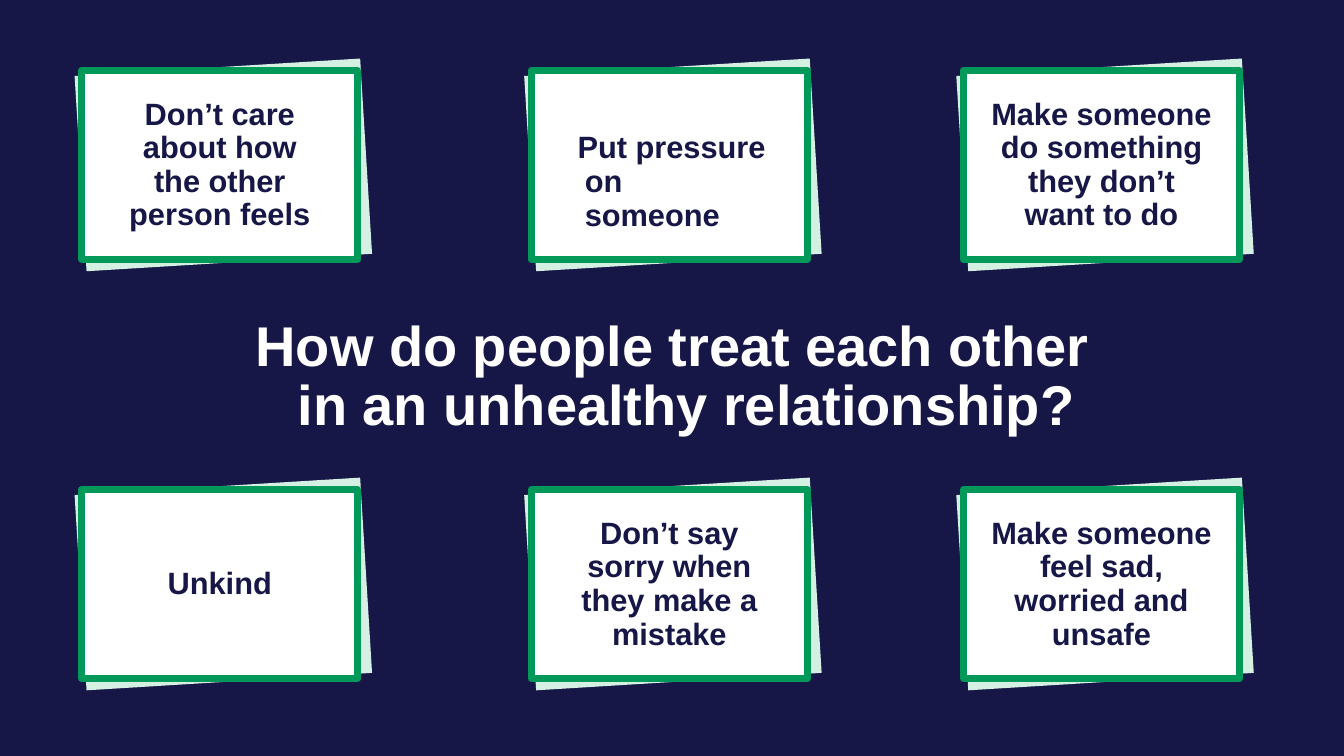
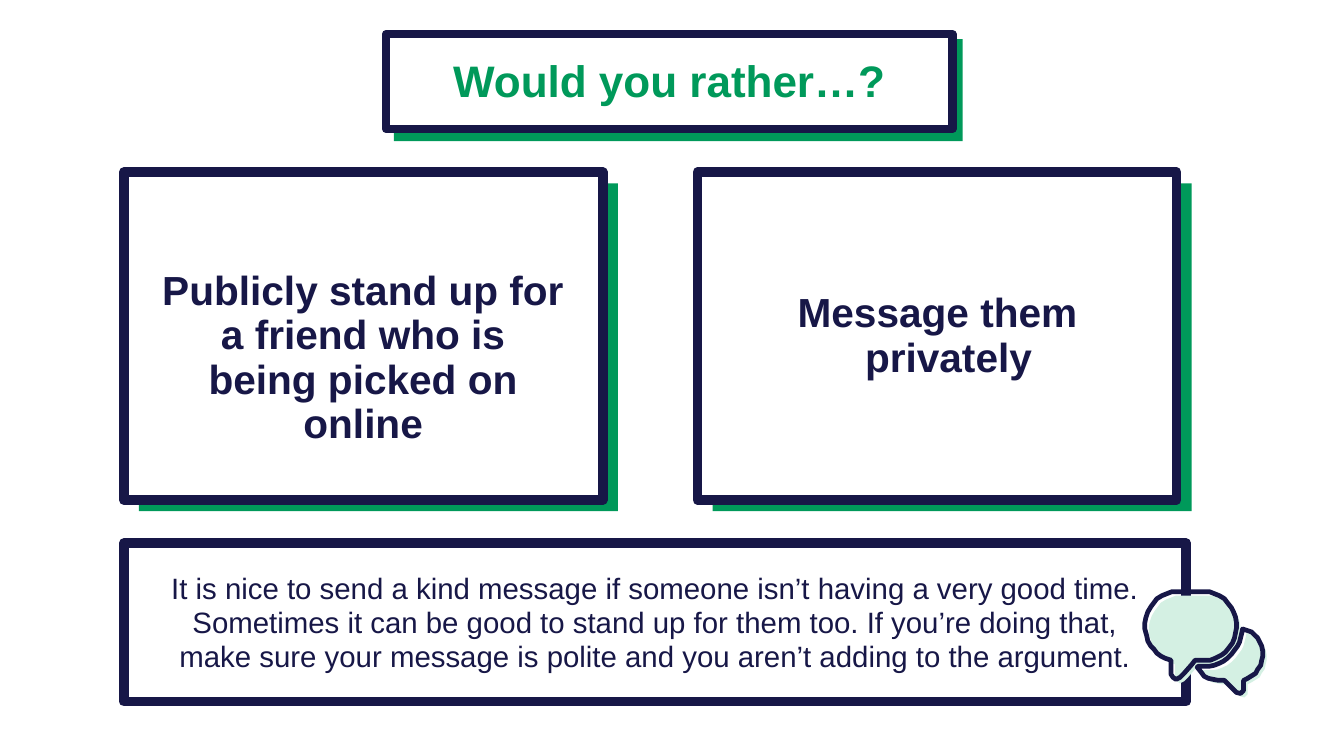
"""Build two slides on healthy and unhealthy ways to treat other people."""
from pptx import Presentation
from pptx.dml.color import RGBColor
from pptx.enum.shapes import MSO_SHAPE
from pptx.enum.text import MSO_ANCHOR, MSO_AUTO_SIZE, PP_ALIGN
from pptx.util import Cm, Pt

COLORS = {"navy": "171747", "green": "00995A", "mint": "D4F0E3", "white": "FFFFFF"}
FONT = "Arial"

QUESTION = "How do people treat each other\nin an unhealthy relationship?"
CARD_COLUMNS = (2.06, 13.39, 24.28)
CARD_ROWS = (1.78, 12.34)
CARD_SIZE = (6.96, 4.75)
PLATE_SIZE = (7.21, 4.93)
PLATE_SHIFT = 0.09
PLATE_ANGLE = -3.5
CARDS = (
    (
        ("Don’t care\nabout how\nthe other\nperson feels", {}),
        ("Put pressure\non\nsomeone", {"hang": (1.35, 0.18), "drop": 0.86}),
        ("Make someone\ndo something\nthey don’t\nwant to do", {}),
    ),
    (
        ("Unkind", {}),
        ("Don’t say\nsorry when\nthey make a\nmistake", {}),
        ("Make someone\nfeel sad,\nworried and\nunsafe", {}),
    ),
)

HEADING = "Would you rather…?"
HEADING_BOX = (9.73, 0.86, 14.27, 2.39)
HEADING_BACKING = (9.93, 0.99, 14.33, 2.57)
CHOICE_TOP = 4.34
CHOICE_SIZE = (12.07, 8.26)
CHOICE_SHIFT = (0.38, 0.28)
CHOICES = (
    (3.12, "Publicly stand up for\na friend who is\nbeing picked on\nonline", {"drop": 1.1}),
    (17.58, "Message them\nprivately", {"hang": (4.22, 1.7)}),
)
ADVICE_BOX = (3.12, 13.69, 26.77, 3.99)
ADVICE = (
    "It is nice to send a kind message if someone isn’t having a very good time.",
    "Sometimes it can be good to stand up for them too. If you’re doing that,\n"
    "make sure your message is polite and you aren’t adding to the argument.",
)

BUBBLE_ORIGIN = (28.85, 14.91)
BUBBLE_UNIT = Cm(0.0254)
BUBBLE_FILL_SHIFT = 0.1
BUBBLES = (
    ((80, 60), (76, 63), (70, 66), (65, 68), (59, 68), (50, 68), (46, 73), (39, 81),
     (35, 85), (31, 87), (28, 85), (26, 82), (26, 68), (20, 66), (16, 64), (12, 61),
     (9, 57), (6, 54), (3, 49), (2, 44), (0, 37), (0, 31), (1, 26), (3, 20), (6, 15),
     (9, 11), (12, 7), (17, 4), (22, 2), (27, 0), (32, 0), (58, 0), (64, 0), (69, 2),
     (74, 4), (79, 7), (82, 11), (86, 16), (88, 20), (90, 25), (91, 31), (91, 36),
     (90, 41), (89, 46), (87, 51), (84, 55)),
    ((108, 42), (106, 40), (103, 39), (100, 38), (97, 37), (96, 42), (95, 46), (94, 50),
     (92, 54), (89, 58), (86, 62), (82, 66), (78, 69), (74, 71), (69, 73), (64, 74),
     (59, 74), (53, 74), (52, 75), (56, 80), (59, 84), (63, 86), (68, 87), (73, 88),
     (79, 88), (83, 92), (91, 100), (95, 101), (98, 98), (98, 88), (102, 86), (110, 81),
     (112, 77), (115, 73), (116, 68), (117, 64), (117, 59), (116, 54), (114, 50), (112, 46)),
)


def rgb(name):
    return RGBColor.from_string(COLORS[name])


def paint(shape, fill=None, line=None, weight=0):
    if fill:
        shape.fill.solid()
        shape.fill.fore_color.rgb = rgb(fill)
    else:
        shape.fill.background()
    if line:
        shape.line.color.rgb = rgb(line)
        shape.line.width = Pt(weight)
    else:
        shape.line.fill.background()


def add_panel(slide, box, **look):
    panel = slide.shapes.add_shape(MSO_SHAPE.RECTANGLE, *map(Cm, box))
    panel.shadow.inherit = False
    paint(panel, **look)
    return panel


def write(shape, paragraphs, size, leading, color="navy", bold=True, hang=None, drop=0):
    frame = shape.text_frame
    frame.word_wrap = True
    frame.auto_size = MSO_AUTO_SIZE.NONE
    frame.vertical_anchor = MSO_ANCHOR.MIDDLE
    frame.margin_left = frame.margin_right = frame.margin_bottom = 0
    frame.margin_top = Cm(drop)
    for index, text in enumerate(paragraphs):
        paragraph = frame.add_paragraph() if index else frame.paragraphs[0]
        paragraph.alignment = PP_ALIGN.LEFT if hang else PP_ALIGN.CENTER
        paragraph.line_spacing = Pt(leading)
        paragraph.space_before = Pt(0)
        if hang:
            margin, outdent = hang
            properties = paragraph._p.get_or_add_pPr()
            properties.set("marL", str(Cm(margin)))
            properties.set("indent", str(-Cm(outdent)))
        for number, line in enumerate(text.split("\n")):
            if number:
                paragraph.add_line_break()
            run = paragraph.add_run()
            run.text = line
            run.font.name = FONT
            run.font.size = Pt(size)
            run.font.bold = bold
            run.font.color.rgb = rgb(color)


def place_title(slide, box, text, **style):
    title = slide.shapes.title
    title.left, title.top, title.width, title.height = map(Cm, box)
    write(title, [text], **style)
    return title


def add_card(slide, left, top, text, style):
    width, height = CARD_SIZE
    plate_width, plate_height = PLATE_SIZE
    plate_left = left + (width - plate_width) / 2 + PLATE_SHIFT
    plate_top = top + (height - plate_height) / 2
    plate = add_panel(slide, (plate_left, plate_top, *PLATE_SIZE), fill="mint")
    plate.rotation = PLATE_ANGLE
    card = add_panel(slide, (left, top, *CARD_SIZE), fill="white", line="green", weight=5)
    write(card, [text], size=22, leading=24, **style)


def add_bubble(slide, points, shift=0, **look):
    left, top = BUBBLE_ORIGIN
    builder = slide.shapes.build_freeform(*points[0], scale=BUBBLE_UNIT)
    builder.add_line_segments(points[1:], close=True)
    bubble = builder.convert_to_shape(Cm(left + shift), Cm(top + shift))
    bubble.shadow.inherit = False
    paint(bubble, **look)


def build_treatment(slide):
    slide.background.fill.solid()
    slide.background.fill.fore_color.rgb = rgb("navy")
    place_title(slide, (6.4, 7.9, 22, 3.25), QUESTION,
                size=40, leading=42, color="white", hang=(1.1, 1.06))
    for top, row in zip(CARD_ROWS, CARDS):
        for left, (text, style) in zip(CARD_COLUMNS, row):
            add_card(slide, left, top, text, style)


def build_choice(slide):
    add_panel(slide, HEADING_BACKING, fill="green")
    heading = place_title(slide, HEADING_BOX, HEADING, size=31.5, leading=36, color="green")
    paint(heading, fill="white", line="navy", weight=6)
    slide.shapes._spTree.append(heading._element)
    shift_x, shift_y = CHOICE_SHIFT
    for left, text, style in CHOICES:
        add_panel(slide, (left + shift_x, CHOICE_TOP + shift_y, *CHOICE_SIZE), fill="green")
        choice = add_panel(slide, (left, CHOICE_TOP, *CHOICE_SIZE),
                           fill="white", line="navy", weight=7)
        write(choice, [text], size=29, leading=31.7, **style)
    advice = add_panel(slide, ADVICE_BOX, line="navy", weight=7)
    write(advice, ADVICE, size=21, leading=24.3, bold=False)
    for points in BUBBLES:
        add_bubble(slide, points, BUBBLE_FILL_SHIFT, fill="mint")
    for points in BUBBLES:
        add_bubble(slide, points, line="navy", weight=3.36)


def main():
    deck = Presentation()
    deck.slide_width, deck.slide_height = Cm(33.87), Cm(19.05)
    title_only = deck.slide_layouts[5]
    for build in (build_treatment, build_choice):
        build(deck.slides.add_slide(title_only))
    deck.save("out.pptx")


if __name__ == "__main__":
    main()
